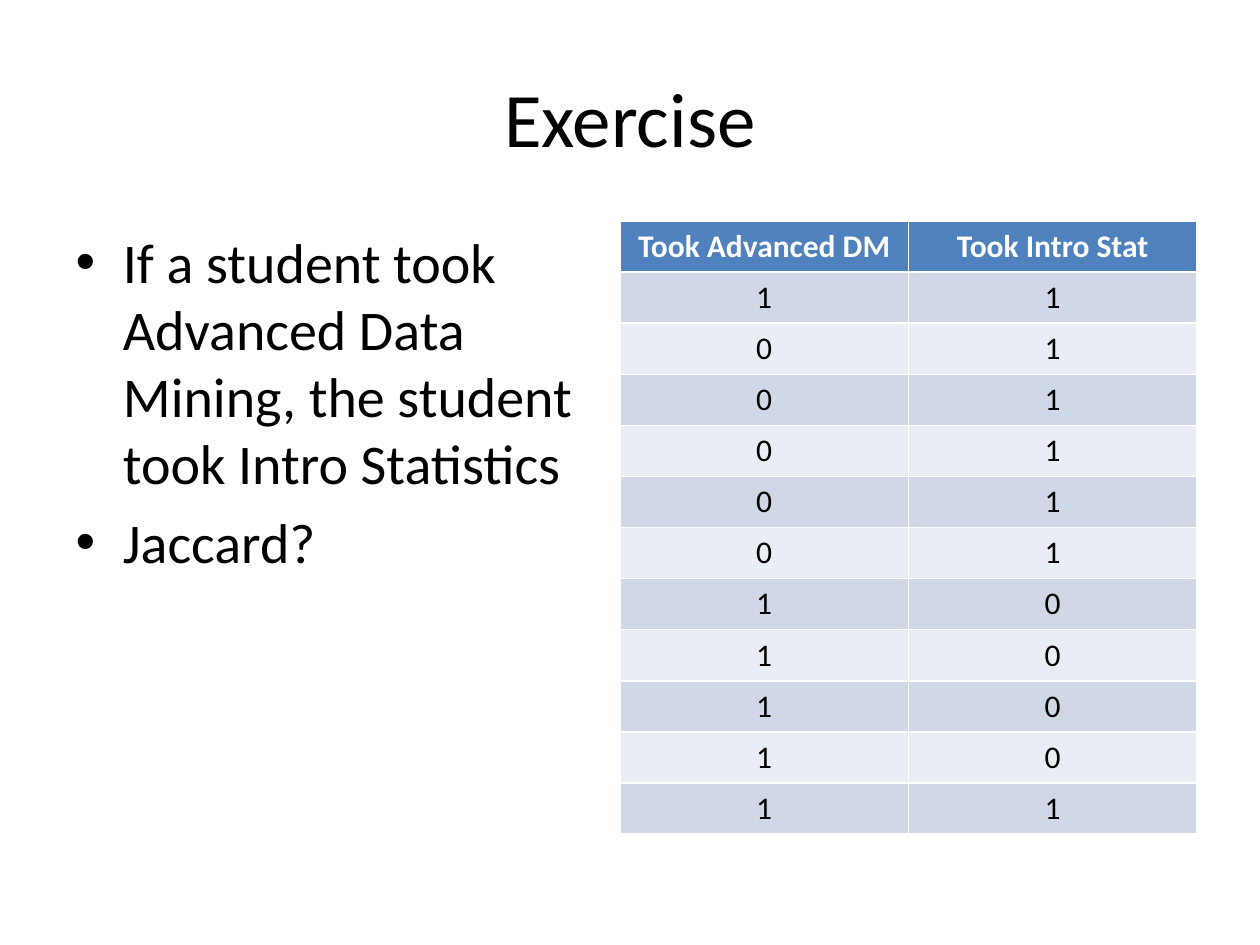
"""Build the exercise slide with its bullets and course table."""
from pptx import Presentation
from pptx.dml.color import RGBColor as RGB
from pptx.enum.text import MSO_ANCHOR as Anchor, PP_ALIGN as Align
from pptx.util import Pt

PX = 914400 // 126
BLACK = RGB(0, 0, 0)
WHITE = RGB(255, 255, 255)
BLUE = RGB(0x4F, 0x81, 0xBD)
BANDS = [RGB(0xE9, 0xED, 0xF4), RGB(0xD0, 0xD8, 0xE8)]
FONT = "Calibri"


def place(shape, *box):
    shape.left, shape.top, shape.width, shape.height = [n * PX for n in box]


def style(para, size, color, align, bold=False):
    para.alignment = align
    font = para.font
    font.name, font.size, font.bold = FONT, Pt(size), bold
    font.color.rgb = color


deck = Presentation()
deck.slide_width, deck.slide_height = 1260 * PX, 945 * PX
slide = deck.slides.add_slide(deck.slide_layouts[1])

title = slide.shapes.title
place(title, 63, 38, 1134, 157)
title.text_frame.text = "Exercise"
title.text_frame.vertical_anchor = Anchor.MIDDLE
style(title.text_frame.paragraphs[0], 44, BLACK, Align.CENTER)

body = slide.placeholders[1]
place(body, 63, 221, 525, 624)
body.text_frame.text = (
    "If a student took Advanced Data Mining, the student took Intro Statistics\n"
    "Jaccard?"
)
for para in body.text_frame.paragraphs:
    style(para, 32, BLACK, Align.LEFT)

heads = ("Took Advanced DM", "Took Intro Stat")
pairs = [(1, 1)] + [(0, 1)] * 5 + [(1, 0)] * 4 + [(1, 1)]
rows = [heads] + pairs
frame = slide.shapes.add_table(
    len(rows), len(heads), 620 * PX, 221 * PX, 577 * PX, len(rows) * 51 * PX
)
table = frame.table
for r, row in enumerate(rows):
    head = r == 0
    table.rows[r].height = 51 * PX
    for c, value in enumerate(row):
        cell = table.cell(r, c)
        cell.text = str(value)
        cell.fill.solid()
        cell.fill.fore_color.rgb = BLUE if head else BANDS[r % 2]
        para = cell.text_frame.paragraphs[0]
        style(para, 18, WHITE if head else BLACK, Align.CENTER, head)

deck.save("out.pptx")
